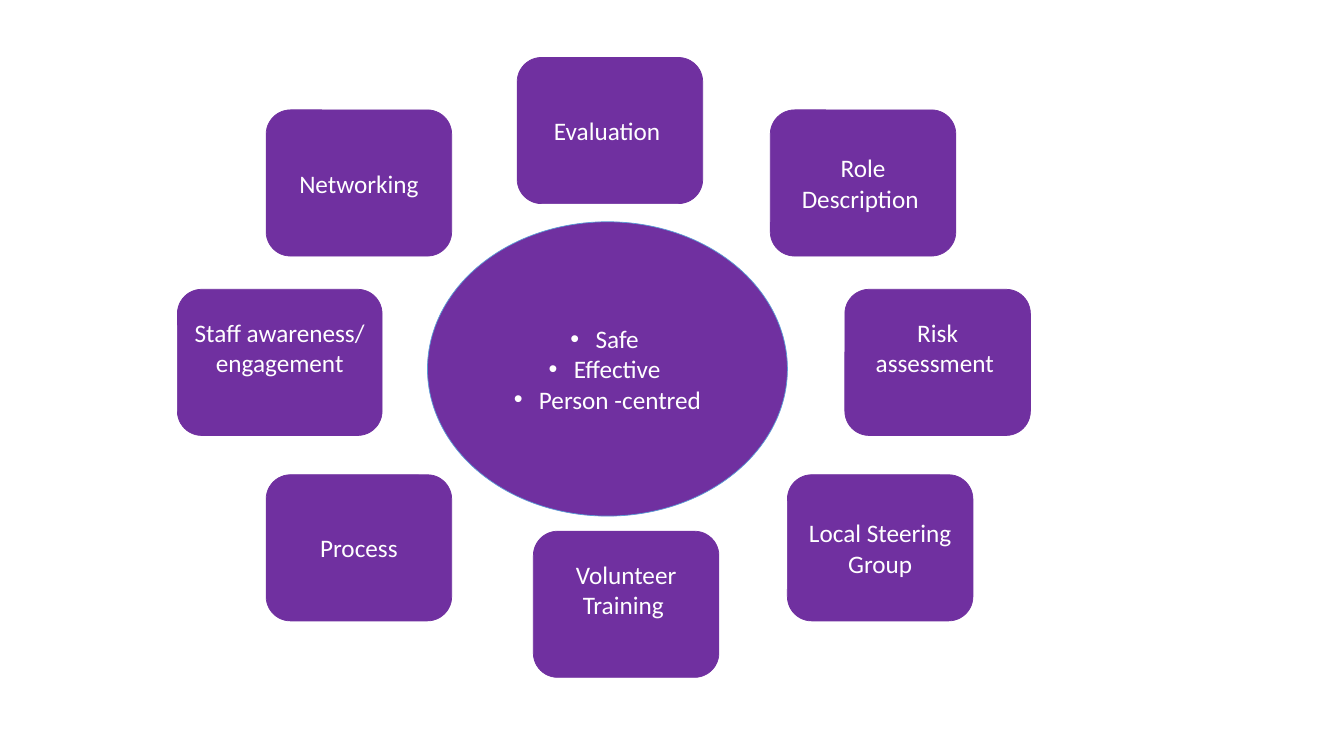
"""Build a slide with a central ellipse of aims ringed by rounded boxes."""
from dataclasses import dataclass

from lxml import etree
from pptx import Presentation
from pptx.dml.color import RGBColor
from pptx.enum.shapes import MSO_SHAPE
from pptx.enum.text import MSO_ANCHOR, PP_ALIGN
from pptx.oxml.ns import qn
from pptx.util import Pt

PX = 9144
PURPLE = RGBColor(0x70, 0x30, 0xA0)
BLUE = RGBColor(0x5B, 0x9B, 0xD5)
WHITE = RGBColor(0xFF, 0xFF, 0xFF)
ELLIPSE = MSO_SHAPE.OVAL
ROUNDED = MSO_SHAPE.ROUNDED_RECTANGLE
MIDDLE = MSO_ANCHOR.MIDDLE
CENTER = PP_ALIGN.CENTER
INSET = 10
LINE_HEIGHT = 30
BULLET_INDENT = 25


@dataclass(frozen=True)
class Node:
    """A filled shape with centred lines, measured in px."""

    x: int
    y: int
    lines: tuple[str, ...]
    w: int = 184
    h: int = 145
    shape: int = ROUNDED
    outline: RGBColor = PURPLE
    bulleted: bool = False
    raised: bool = False


NODES = (
    Node(424, 220, ("Safe ", "Effective ", "Person -centred"), 357, 292,
         ELLIPSE, BLUE, bulleted=True),
    Node(781, 471, ("Local Steering Group",)),
    Node(176, 287, ("Staff awareness/", "engagement"), 203, raised=True),
    Node(764, 109, ("Role Description ",)),
    Node(264, 109, ("Networking",)),
    Node(264, 471, ("Process",)),
    Node(838, 287, ("Risk assessment ",), raised=True),
    Node(529, 527, ("Volunteer Training ",), raised=True),
    Node(513, 57, ("Evaluation ",)),
)


def add_bullet(p) -> None:
    """Give a paragraph a round bullet and a hanging indent."""
    ppr = p._p.get_or_add_pPr()
    ppr.set("marL", str(BULLET_INDENT * PX))
    ppr.set("indent", str(-BULLET_INDENT * PX))
    etree.SubElement(ppr, qn("a:buFont")).set("typeface", "Arial")
    etree.SubElement(ppr, qn("a:buChar")).set("char", "•")


def add_node(s, node: Node) -> None:
    """Draw one node with its text."""
    sp = s.shapes.add_shape(node.shape, node.x * PX, node.y * PX,
                            node.w * PX, node.h * PX)
    sp.shadow.inherit = False
    sp.fill.solid()
    sp.fill.fore_color.rgb = PURPLE
    sp.line.color.rgb = node.outline
    sp.line.width = Pt(0.5)
    tf = sp.text_frame
    tf.word_wrap = True
    tf.vertical_anchor = MIDDLE
    tf.margin_left = tf.margin_right = INSET * PX
    tf.margin_top = INSET * PX
    tf.margin_bottom = (INSET + LINE_HEIGHT * node.raised) * PX
    for i, line in enumerate(node.lines):
        p = tf.add_paragraph() if i else tf.paragraphs[0]
        p.alignment = CENTER
        if node.bulleted:
            add_bullet(p)
        r = p.add_run()
        r.text = line
        r.font.name = "Calibri"
        r.font.size = Pt(18)
        r.font.color.rgb = WHITE


def main() -> None:
    """Create the presentation and save it."""
    prs = Presentation()
    prs.slide_width = 1333 * PX
    prs.slide_height = 750 * PX
    s = prs.slides.add_slide(prs.slide_layouts[6])
    for node in NODES:
        add_node(s, node)
    prs.save("out.pptx")


if __name__ == "__main__":
    main()
